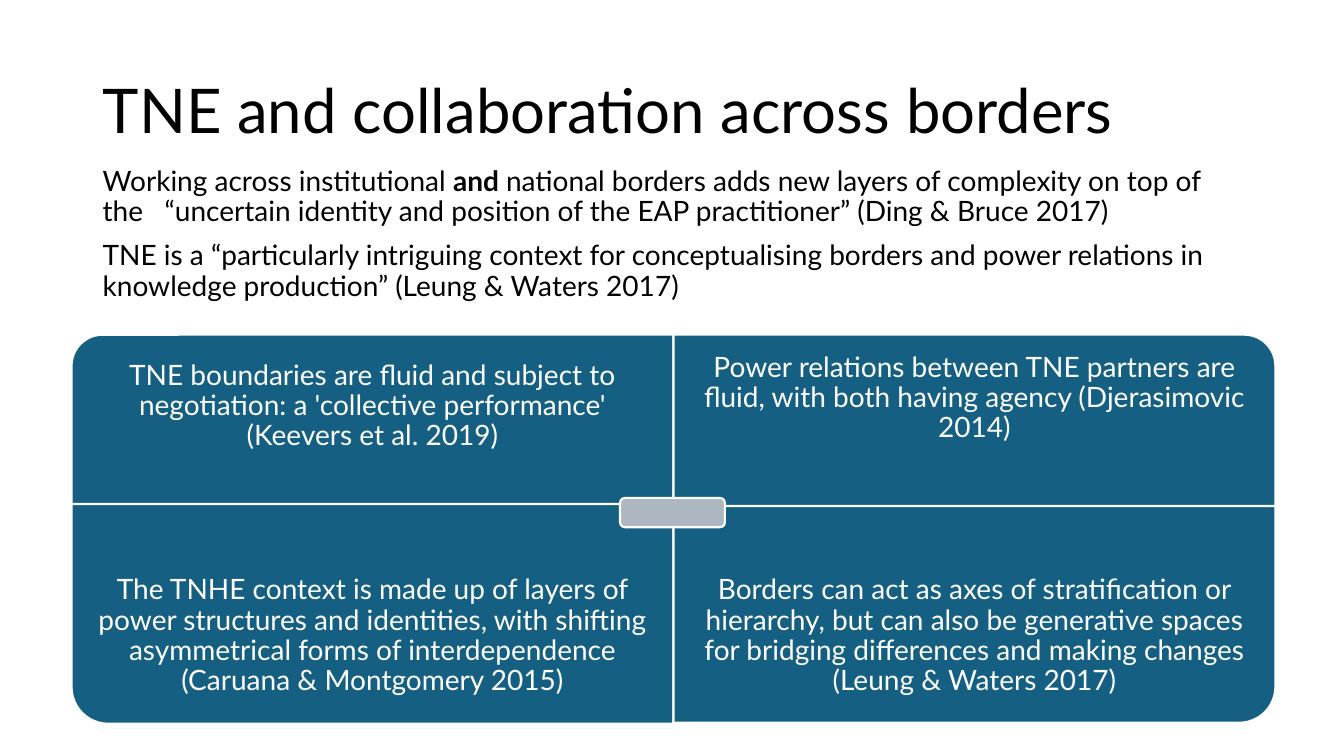
from pptx import Presentation
from pptx.dml.color import RGBColor
from pptx.enum.shapes import MSO_SHAPE
from pptx.enum.text import MSO_ANCHOR, PP_ALIGN
from pptx.util import Pt

PX = 9144
FONT = "Lato"
BLACK = RGBColor(0x00, 0x00, 0x00)
WHITE = RGBColor(0xFF, 0xFF, 0xFF)
TEAL = RGBColor(0x15, 0x60, 0x82)
GREY = RGBColor(0xAC, 0xB7, 0xC1)

LEFT, MID, WIDE = 71, 668, 597

TITLE = [[("TNE and collaboration across borders", False)]]
INTRO = [
    [
        ("Working across institutional ", False),
        ("and ", True),
        ("national borders adds new layers of complexity on top of the   "
         "“uncertain identity and position of the EAP practitioner” "
         "(Ding & Bruce 2017)", False),
    ],
    [
        ("TNE is a “particularly intriguing context for conceptualising "
         "borders and power relations in knowledge production” "
         "(Leung & Waters 2017)", False),
    ],
]

PANELS = [
    (LEFT, 332, 185, 270, 332, 138, 16,
     "TNE boundaries are fluid and subject to negotiation: "
     "a 'collective performance' (Keevers et al. 2019)"),
    (MID, 332, 185, 0, 332, 138, 0,
     "Power relations between TNE partners are fluid, "
     "with both having agency (Djerasimovic 2014)"),
    (LEFT, 500, 218, 180, 555, 164, 0,
     "The TNHE context is made up of layers of power structures and "
     "identities, with shifting asymmetrical forms of interdependence "
     "(Caruana & Montgomery 2015)"),
    (MID, 502, 215, 90, 556, 162, 0,
     "Borders can act as axes of stratification or hierarchy, but can "
     "also be generative spaces for bridging differences and making "
     "changes (Leung & Waters 2017)"),
]


def add_text(slide, box, paras, size, color, inset=(10, 5, 10, 5),
             anchor=MSO_ANCHOR.MIDDLE, align=PP_ALIGN.LEFT, before=0):
    frame = slide.shapes.add_textbox(*[n * PX for n in box]).text_frame
    frame.word_wrap = True
    frame.vertical_anchor = anchor
    (frame.margin_left, frame.margin_top,
     frame.margin_right, frame.margin_bottom) = [n * PX for n in inset]
    for i, runs in enumerate(paras):
        para = frame.add_paragraph() if i else frame.paragraphs[0]
        para.alignment = align
        para.line_spacing = 0.9
        para.space_before = Pt(before)
        for text, bold in runs:
            run = para.add_run()
            run.text = text
            run.font.name = FONT
            run.font.size = Pt(size)
            run.font.bold = bold
            run.font.color.rgb = color


def add_block(slide, kind, box, fill, turn=0):
    left, top, width, height = [n * PX for n in box]
    if turn % 180:
        left += (width - height) // 2
        top += (height - width) // 2
        width, height = height, width
    shape = slide.shapes.add_shape(kind, left, top, width, height)
    shape.rotation = turn
    shape.shadow.inherit = False
    shape.fill.solid()
    shape.fill.fore_color.rgb = fill
    shape.line.color.rgb = WHITE
    shape.line.width = Pt(1.5)


def add_panel(slide, left, top, height, turn, text_top, text_height, pad, text):
    add_block(slide, MSO_SHAPE.ROUND_1_RECTANGLE,
              (left, top, WIDE, height), TEAL, turn)
    add_text(slide, (left, text_top, WIDE, text_height), [[(text, False)]],
             20, WHITE, inset=(12, pad, 12, 12), align=PP_ALIGN.CENTER)


def main():
    deck = Presentation()
    deck.slide_width = 1333 * PX
    deck.slide_height = 750 * PX
    slide = deck.slides.add_slide(deck.slide_layouts[6])
    add_text(slide, (92, 40, 1150, 145), TITLE, 44, BLACK)
    add_text(slide, (92, 161, 1150, 516), INTRO, 20, BLACK,
             anchor=MSO_ANCHOR.TOP, before=10)
    for panel in PANELS:
        add_panel(slide, *panel)
    add_block(slide, MSO_SHAPE.ROUNDED_RECTANGLE, (615, 494, 104, 29), GREY)
    deck.save("out.pptx")


if __name__ == "__main__":
    main()
